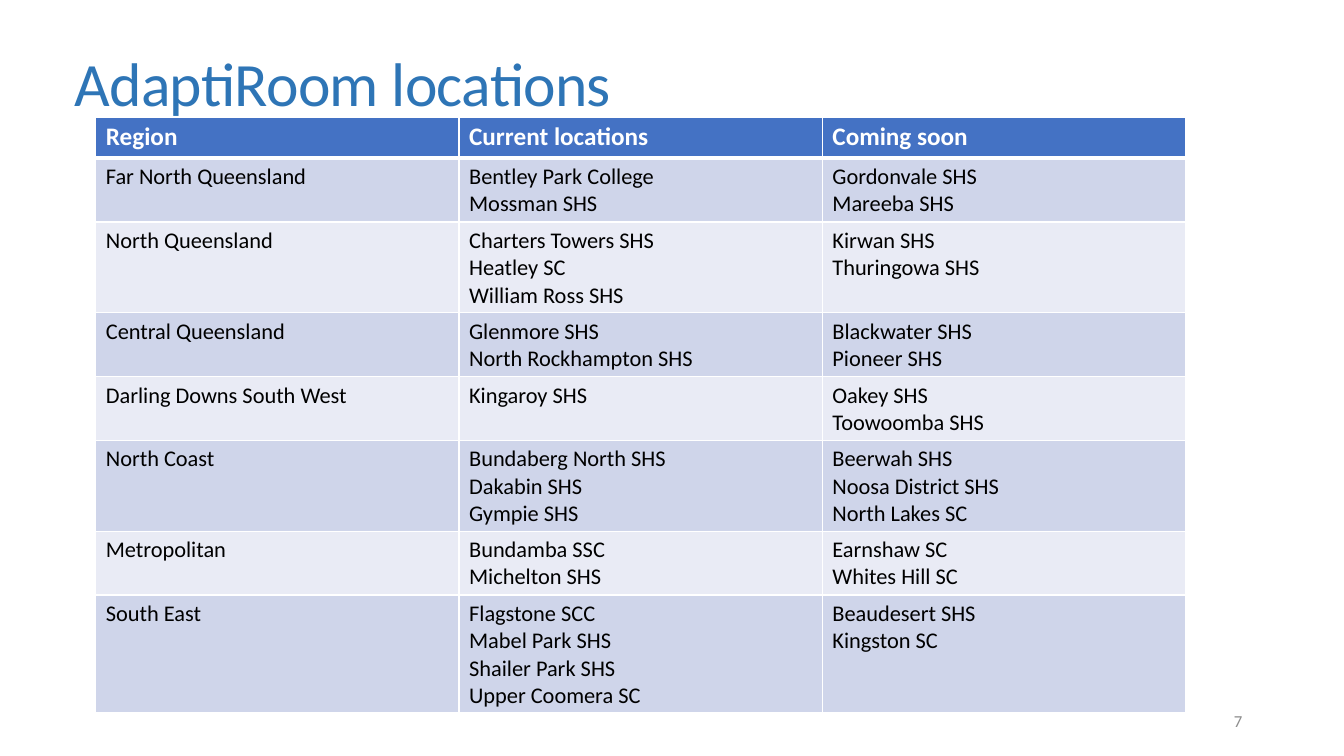
from lxml import etree
from pptx import Presentation
from pptx.dml.color import RGBColor
from pptx.enum.text import MSO_ANCHOR, PP_ALIGN
from pptx.oxml.ns import qn
from pptx.util import Inches, Pt

MIDDLE = MSO_ANCHOR.MIDDLE
LEFT, RIGHT = PP_ALIGN.LEFT, PP_ALIGN.RIGHT

FONT = "Calibri"
COLORS = {
    "title": "2E75B6",
    "head": "4472C4",
    "odd": "CFD5EA",
    "even": "E9EBF5",
    "line": "FFFFFF",
    "white": "FFFFFF",
    "black": "000000",
    "number": "8C8C8C",
}

HEADS = ["Region", "Current locations", "Coming soon"]
REGIONS = [
    ("Far North Queensland",
     ["Bentley Park College", "Mossman SHS"],
     ["Gordonvale SHS", "Mareeba SHS"]),
    ("North Queensland",
     ["Charters Towers SHS", "Heatley SC", "William Ross SHS"],
     ["Kirwan SHS", "Thuringowa SHS"]),
    ("Central Queensland",
     ["Glenmore SHS", "North Rockhampton SHS"],
     ["Blackwater SHS", "Pioneer SHS"]),
    ("Darling Downs South West",
     ["Kingaroy SHS"],
     ["Oakey SHS", "Toowoomba SHS"]),
    ("North Coast",
     ["Bundaberg North SHS", "Dakabin SHS", "Gympie SHS"],
     ["Beerwah SHS", "Noosa District SHS", "North Lakes SC"]),
    ("Metropolitan",
     ["Bundamba SSC", "Michelton SHS"],
     ["Earnshaw SC", "Whites Hill SC"]),
    ("South East",
     ["Flagstone SCC", "Mabel Park SHS", "Shailer Park SHS", "Upper Coomera SC"],
     ["Beaudesert SHS", "Kingston SC"]),
]


def rgb(name):
    return RGBColor.from_string(COLORS[name])


def style(para, size, color, bold=False):
    font = para.font
    font.name, font.size, font.bold = FONT, Pt(size), bold
    font.color.rgb = rgb(color)


def add_text(slide, box, text, size, color, align=LEFT):
    frame = slide.shapes.add_textbox(*map(Inches, box)).text_frame
    frame.word_wrap = True
    frame.vertical_anchor = MIDDLE
    para = frame.paragraphs[0]
    para.text = text
    para.alignment = align
    style(para, size, color)
    return para


def add_border(cell, side, width):
    line = etree.SubElement(cell._tc.get_or_add_tcPr(), qn(f"a:ln{side}"),
                            w=str(Pt(width)))
    fill = etree.SubElement(line, qn("a:solidFill"))
    etree.SubElement(fill, qn("a:srgbClr"), val=COLORS["line"])


def fill_cell(cell, lines, fill, size, color, bold=False, base=1):
    cell.text = "\n".join(lines)
    for para in cell.text_frame.paragraphs:
        style(para, size, color, bold)
    # Borders come before the fill in the cell properties
    for side in "LRT":
        add_border(cell, side, 1)
    add_border(cell, "B", base)
    cell.fill.solid()
    cell.fill.fore_color.rgb = rgb(fill)


def add_regions(slide):
    box = map(Inches, (0.95, 1.16, 10.81, 5.91))
    table = slide.shapes.add_table(len(REGIONS) + 1, len(HEADS), *box).table

    # Least height; rows grow to hold their lists
    for row in table.rows:
        row.height = Inches(0.41)

    # Header row
    for col, head in enumerate(HEADS):
        fill_cell(table.cell(0, col), [head], "head", 18, "white", True, 3)

    # One row per region
    for row, (region, now, soon) in enumerate(REGIONS, 1):
        band = "odd" if row % 2 else "even"
        for col, lines in enumerate(([region], now, soon)):
            fill_cell(table.cell(row, col), lines, band, 16, "black")


def main():
    deck = Presentation()
    deck.slide_width, deck.slide_height = Inches(13.33), Inches(7.5)
    slide = deck.slides.add_slide(deck.slide_layouts[6])

    # Title, set slightly tight
    title = add_text(slide, (0.64, 0.13, 11.5, 1.45),
                     "AdaptiRoom locations", 44, "title")
    title.line_spacing = 0.9
    title.runs[0]._r.get_or_add_rPr().set("spc", "-50")

    add_regions(slide)

    # Slide number
    add_text(slide, (9.42, 6.95, 3, 0.4), "7", 12, "number", RIGHT)

    deck.save("out.pptx")


if __name__ == "__main__":
    main()
